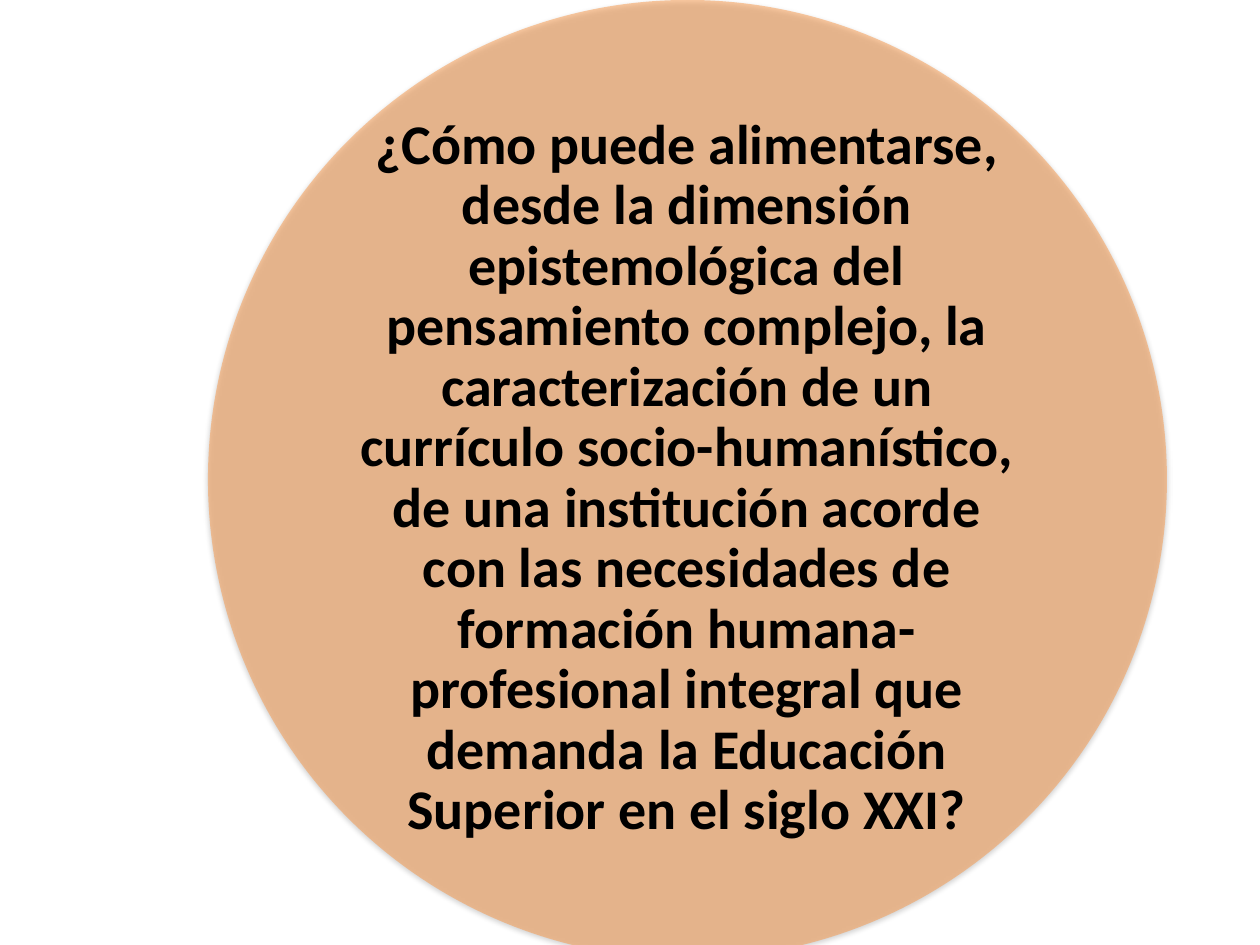
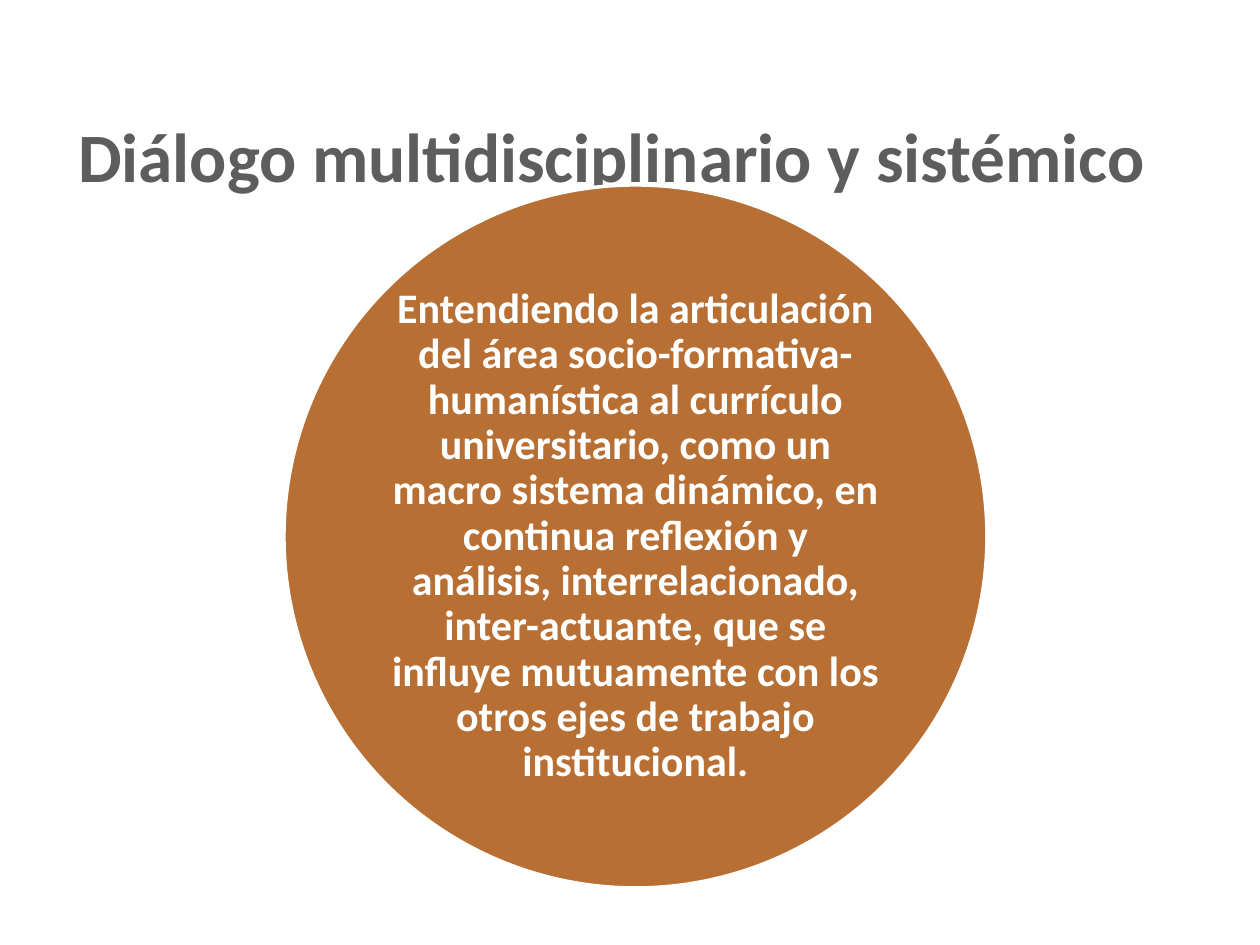
import math

from lxml import etree
from pptx import Presentation
from pptx.dml.color import RGBColor
from pptx.enum import shapes, text
from pptx.oxml import ns
from pptx.util import Inches, Pt

PX_PER_INCH = 126
FONT = "Calibri"
PEACH, BROWN = "F79646", "B76F34"
BLACK, WHITE, GREY = "000000", "FFFFFF", "5D5D5D"

QUESTION = (
    "¿Cómo puede alimentarse, desde la dimensión epistemológica del pensamiento "
    "complejo, la caracterización de un currículo socio-humanístico, de una "
    "institución acorde con las necesidades de formación humana-profesional "
    "integral que demanda la Educación Superior en el siglo XXI?"
)
TITLE = "Diálogo multidisciplinario y sistémico"
STATEMENT = (
    "Entendiendo la articulación del área socio-formativa- humanística al "
    "currículo universitario, como un macro sistema dinámico, en continua "
    "reflexión y análisis, interrelacionado, inter-actuante, que se influye "
    "mutuamente con los otros ejes de trabajo institucional."
)


def px(length):
    return Inches(length / PX_PER_INCH)


def color(value):
    return RGBColor.from_string(value)


def set_all(target, values):
    for name, value in values.items():
        setattr(target, name, value)


def add_label(page, area, wording, size, tint, margins, spacing=1.0):
    box = page.shapes.add_textbox(*map(px, area))
    left, top, right, bottom = map(px, margins)
    set_all(box.text_frame, {
        "word_wrap": True,
        "vertical_anchor": text.MSO_ANCHOR.MIDDLE,
        "margin_left": left,
        "margin_top": top,
        "margin_right": right,
        "margin_bottom": bottom,
    })
    para = box.text_frame.paragraphs[0]
    set_all(para, {"alignment": text.PP_ALIGN.CENTER, "line_spacing": spacing})
    span = para.add_run()
    span.text = wording
    set_all(span.font, {"name": FONT, "size": Pt(size), "bold": True})
    span.font.color.rgb = color(tint)


def add_circle(page, area, fill):
    circle = page.shapes.add_shape(shapes.MSO_SHAPE.OVAL, *map(px, area))
    circle.shadow.inherit = False
    circle.fill.solid()
    circle.fill.fore_color.rgb = color(fill)
    circle.line.fill.background()
    return circle


def add_circle_text(page, area, wording, size, tint, margin):
    left, top, diameter, _ = area
    side = round(diameter / math.sqrt(2))
    inset = (diameter - side) // 2
    inner = (left + inset, top + inset, side, side)
    add_label(page, inner, wording, size, tint, (margin,) * 4, 0.9)


def set_alpha(color_element, percent):
    etree.SubElement(color_element, ns.qn("a:alpha"), val=str(percent * 1000))


def soften(circle):
    properties = circle.fill._xPr
    set_alpha(properties.find(ns.qn("a:solidFill"))[0], 50)
    effects = properties.find(ns.qn("a:effectLst"))
    shadow = etree.SubElement(
        effects, ns.qn("a:outerShdw"), blurRad=str(Pt(3.1)), dist=str(Pt(1.8)),
        dir="5400000", rotWithShape="0")
    set_alpha(etree.SubElement(shadow, ns.qn("a:srgbClr"), val=BLACK), 35)


def build_question(page, area):
    soften(add_circle(page, area, PEACH))
    add_circle_text(page, area, QUESTION, 32, BLACK, 0)


def build_dialogue(page, title_area, circle_area):
    add_label(page, title_area, TITLE, 39.6, GREY, (13, 6, 31, 6))
    circle = add_circle(page, circle_area, BROWN)
    circle.line.color.rgb = color(WHITE)
    circle.line.width = Pt(2)
    add_circle_text(page, circle_area, STATEMENT, 24, WHITE, 4)


def main():
    deck = Presentation()
    set_all(deck, {"slide_width": px(1260), "slide_height": px(945)})
    blank = deck.slide_layouts[6]
    build_question(deck.slides.add_slide(blank), (208, 0, 959, 959))
    build_dialogue(deck.slides.add_slide(blank),
                   (54, 76, 1134, 157), (284, 185, 703, 703))
    deck.save("out.pptx")


if __name__ == "__main__":
    main()
